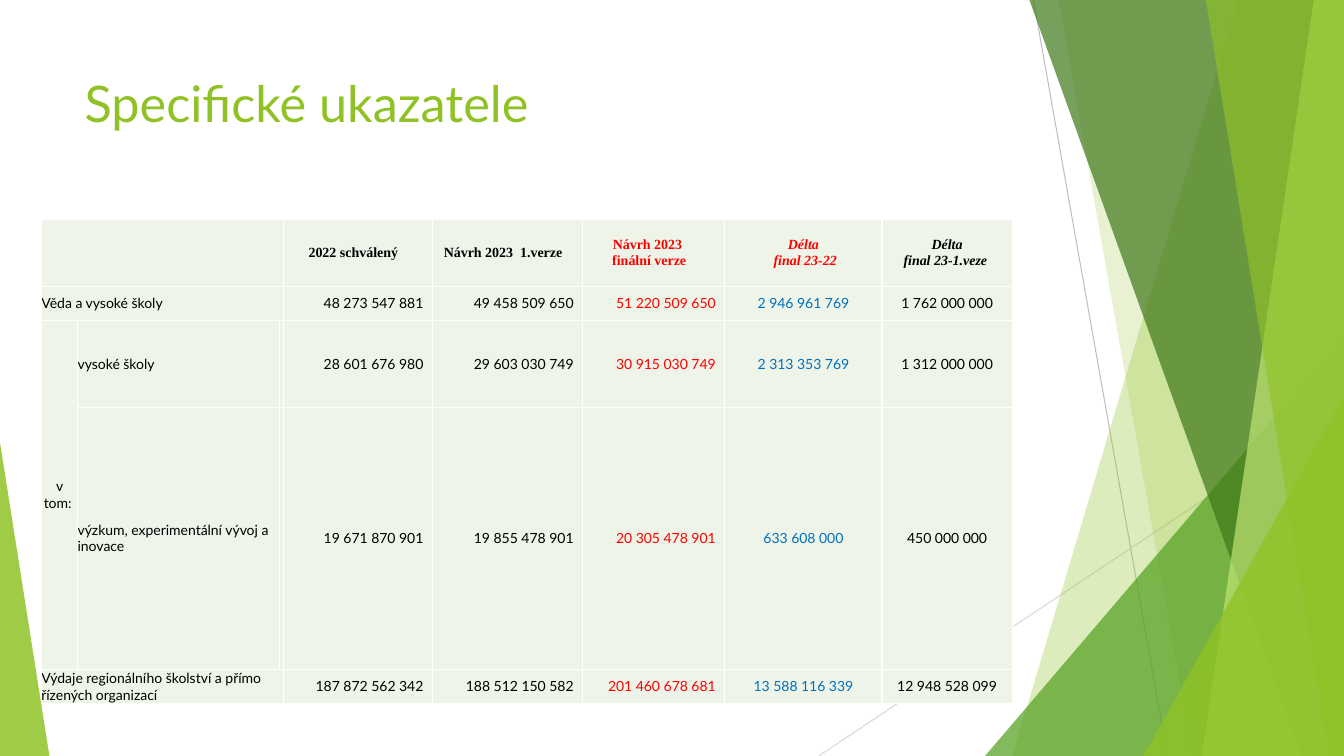
from lxml import etree
from pptx import Presentation, util as u
from pptx.dml.color import RGBColor
from pptx.enum import shapes, text
from pptx.oxml import ns

WIDTH, HEIGHT = 13.33, 7.5
GREEN, BLACK, RED, BLUE = "90C226", "000000", "FF0000", "0070C0"
CELL_FILL, WHITE = "EEF4E8", "FFFFFF"
COLUMNS = [0.36, 2, 0.03, 1.48, 1.49, 1.41, 1.56, 1.29]
ROWS = [0.66, 0.34, 0.86, 2.6, 0.34]
LEFT, CENTER, RIGHT = text.PP_ALIGN.LEFT, text.PP_ALIGN.CENTER, text.PP_ALIGN.RIGHT

HEADERS = ["2022 schválený", "Návrh 2023  1.verze", "Návrh 2023 \nfinální verze",
           "Délta\n final 23-22", "Délta\nfinal 23-1.veze "]
# Row label, its column, and the five values
RECORDS = [
    ("Věda a vysoké školy", 0,
     ["48 273 547 881", "49 458 509 650", "51 220 509 650", "2 946 961 769", "1 762 000 000"]),
    ("vysoké školy", 1,
     ["28 601 676 980", "29 603 030 749", "30 915 030 749", "2 313 353 769", "1 312 000 000"]),
    ("výzkum, experimentální vývoj a inovace", 1,
     ["19 671 870 901", "19 855 478 901", "20 305 478 901", "633 608 000", "450 000 000"]),
    ("Výdaje regionálního školství a přímo řízených organizací", 0,
     ["187 872 562 342", "188 512 150 582", "201 460 678 681", "13 588 116 339",
      "12 948 528 099"]),
]
# Header colour, value colour, value alignment, right margin, italic header
VALUE_STYLES = [
    (BLACK, BLACK, RIGHT, 0.09, False),
    (BLACK, BLACK, RIGHT, 0.09, False),
    (RED, RED, RIGHT, 0.09, False),
    (RED, BLUE, CENTER, 0, True),
    (BLACK, BLACK, CENTER, 0, True),
]


def colour(value):
    return RGBColor.from_string(value)


def set_attributes(target, values):
    for name, value in values.items():
        setattr(target, name, value)


def write(frame, words, align, size, name, tint, **extra):
    for number, line in enumerate(words.split("\n")):
        para = frame.paragraphs[0] if number == 0 else frame.add_paragraph()
        para.alignment = align
        span = para.add_run()
        span.text = line
        set_attributes(span.font, dict(size=u.Pt(size), name=name, **extra))
        span.font.color.rgb = colour(tint)


# Decoration
def tint_shape(shape, fill, opacity):
    shape.shadow.inherit = False
    shape.fill.solid()
    shape.fill.fore_color.rgb = colour(fill)
    shape.line.fill.background()
    rgb = shape._element.spPr.find(".//" + ns.qn("a:srgbClr"))
    etree.SubElement(rgb, ns.qn("a:alpha"), val=str(opacity * 1000))


def add_line(page, start, end, tint):
    line = page.shapes.add_connector(
        shapes.MSO_CONNECTOR.STRAIGHT, *[u.Inches(value) for value in start + end])
    line.line.color.rgb = colour(tint)
    line.line.width = u.Pt(0.75)
    etree.SubElement(line._element.spPr, ns.qn("a:effectLst"))


def add_band(page, top_x, bottom_x, fill, opacity):
    """Band from a slanted left side to the right slide edge."""
    corners = [(WIDTH, 0), (WIDTH, HEIGHT), (bottom_x, HEIGHT)]
    builder = page.shapes.build_freeform(u.Inches(top_x), 0)
    builder.add_line_segments([(u.Inches(x), u.Inches(y)) for x, y in corners])
    tint_shape(builder.convert_to_shape(), fill, opacity)


def add_corner(page, left, width, height, apex, fill, opacity):
    """Right triangle standing on the bottom slide edge."""
    corner = page.shapes.add_shape(
        shapes.MSO_SHAPE.ISOSCELES_TRIANGLE, u.Inches(left), u.Inches(HEIGHT - height),
        u.Inches(width), u.Inches(height))
    corner.adjustments[0] = apex
    tint_shape(corner, fill, opacity)


def add_decoration(page):
    add_line(page, (10.25, 0), (11.58, HEIGHT), "BFBFBF")
    add_line(page, (WIDTH, 4.03), (8.12, HEIGHT), "D9D9D9")
    add_band(page, 12.28, 10.04, GREEN, 30)
    add_band(page, 10.5, 11.83, GREEN, 20)
    add_corner(page, 9.77, 3.56, 4.17, 1, "54A021", 72)
    add_band(page, 10.21, 12.91, "3F7819", 70)
    add_band(page, 13.03, 11.92, "C0E474", 70)
    add_band(page, 11.96, 13.18, GREEN, 65)
    add_corner(page, 11.34, 1.99, 3.57, 1, GREEN, 80)
    add_corner(page, 0, 0.49, 3.11, 0, GREEN, 85)


# Title
def add_title(page, left, top, width, height):
    title = page.shapes.title
    set_attributes(title, dict(left=u.Inches(left), top=u.Inches(top),
                               width=u.Inches(width), height=u.Inches(height)))
    title.text_frame.vertical_anchor = text.MSO_ANCHOR.TOP
    write(title.text_frame, "Specifické ukazatele", LEFT, 36, "Lato", GREEN)


# Table
def format_cell(cell):
    set_attributes(cell, dict(margin_left=0, margin_right=0, margin_top=0, margin_bottom=0,
                              vertical_anchor=text.MSO_ANCHOR.MIDDLE))
    properties = cell._tc.get_or_add_tcPr()
    for side in ("lnL", "lnR", "lnT", "lnB"):
        border = etree.SubElement(properties, ns.qn("a:" + side), w=str(u.Pt(1)))
        fill = etree.SubElement(border, ns.qn("a:solidFill"))
        etree.SubElement(fill, ns.qn("a:srgbClr"), val=WHITE)
    cell.fill.solid()
    cell.fill.fore_color.rgb = colour(CELL_FILL)


def add_budget_table(page, left, top):
    table = page.shapes.add_table(
        len(ROWS), len(COLUMNS), u.Inches(left), u.Inches(top),
        u.Inches(sum(COLUMNS)), u.Inches(sum(ROWS))).table
    set_attributes(table, dict(first_row=False, horz_banding=False))
    for column, width in zip(table.columns, COLUMNS):
        column.width = u.Inches(width)
    for row, height in zip(table.rows, ROWS):
        row.height = u.Inches(height)
    for cell in table.iter_cells():
        format_cell(cell)

    # Label columns
    for row in (0, 1, 4):
        table.cell(row, 0).merge(table.cell(row, 2))
    table.cell(2, 0).merge(table.cell(3, 0))
    write(table.cell(2, 0).text_frame, "v tom: ", CENTER, 10, "Lato", BLACK)
    for row, (label, column, _) in enumerate(RECORDS, 1):
        write(table.cell(row, column).text_frame, label, LEFT, 10, "Lato", BLACK)

    # Value columns
    for index, (head_tint, tint, align, margin, italic) in enumerate(VALUE_STYLES):
        cells = [table.cell(row, index + 3) for row in range(len(ROWS))]
        for cell in cells:
            cell.margin_right = u.Inches(margin)
        write(cells[0].text_frame, HEADERS[index], CENTER, 10, "Times New Roman",
              head_tint, bold=True, italic=italic)
        for cell, (_, _, values) in zip(cells[1:], RECORDS):
            write(cell.text_frame, values[index], align, 10, "Lato", tint)


def main():
    deck = Presentation()
    set_attributes(deck, dict(slide_width=u.Inches(WIDTH), slide_height=u.Inches(HEIGHT)))
    page = deck.slides.add_slide(deck.slide_layouts[5])
    add_decoration(page)
    add_title(page, 0.74, 0.67, 9.4, 1.44)
    add_budget_table(page, 0.41, 2.18)
    deck.save("out.pptx")


if __name__ == "__main__":
    main()
